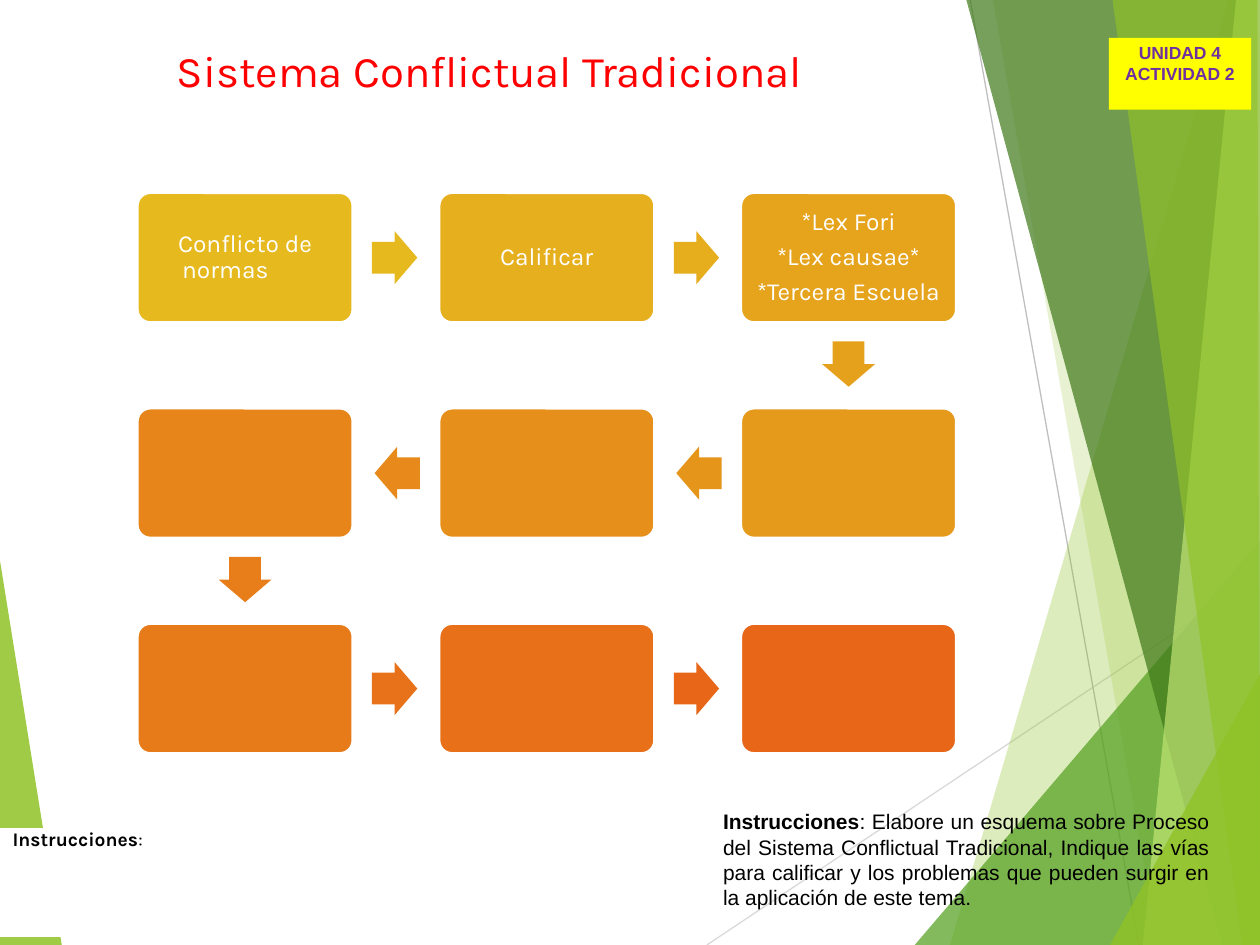
from lxml import etree
from pptx import Presentation
from pptx.dml.color import RGBColor
from pptx.enum.shapes import MSO_CONNECTOR, MSO_SHAPE
from pptx.enum.text import MSO_ANCHOR, MSO_AUTO_SIZE, PP_ALIGN
from pptx.oxml.ns import qn
from pptx.util import Inches, Pt

RECT, ROUND, ARROW = MSO_SHAPE.RECTANGLE, MSO_SHAPE.ROUNDED_RECTANGLE, MSO_SHAPE.RIGHT_ARROW
STRAIGHT = MSO_CONNECTOR.STRAIGHT
TOP, MIDDLE = MSO_ANCHOR.TOP, MSO_ANCHOR.MIDDLE
CENTER, JUSTIFY = PP_ALIGN.CENTER, PP_ALIGN.JUSTIFY
NO_AUTOFIT = MSO_AUTO_SIZE.NONE

COLORS = {
    "white": "FFFFFF", "black": "000000", "red": "FF0000", "yellow": "FFFF00",
    "purple": "7030A0", "lime": "90C226", "green": "54A021", "dark": "3F7819",
    "pale": "C0E474", "line": "D9D9D9", "line2": "BFBFBF",
    "flow_start": "E6B91E", "flow_end": "E76618",
}

# Background facets: colour, opacity in percent, corners
FACETS = [
    ("lime", 85, [(0, 4.45), (0.49, 7.5), (0, 7.5)]),
    ("lime", 30, [(9.75, 0), (7.54, 7.5), (10, 7.5), (10, 0)]),
    ("lime", 20, [(7.88, 0), (9.19, 7.5), (10, 7.5), (10, 0)]),
    ("green", 72, [(7.26, 7.5), (10, 4.29), (10, 7.5)]),
    ("dark", 70, [(7.67, 0), (9.7, 7.5), (10, 7.5), (10, 0)]),
    ("pale", 70, [(9.81, 0), (9.07, 7.5), (10, 7.5), (10, 0)]),
    ("lime", 65, [(8.83, 0), (9.86, 7.5), (10, 7.5), (9.98, 0)]),
    ("lime", 80, [(8.81, 7.5), (10, 5.35), (10, 7.5)]),
]
BACK_LINES = [("line", 5.61, 7.5, 10, 4.57), ("line2", 7.7, 0, 9.04, 7.5)]

# Flow of steps, three to a row, turning at the end of each row
STEPS = [["Conflicto de normas\t"], ["Calificar"],
         ["*Lex Fori", "*Lex causae*", "*Tercera Escuela"]] + [[]] * 6
COLUMNS = 3
FLOW_X, FLOW_Y = 1.09, 1.53
STEP_X, STEP_Y = 2.395, 1.71
BOX_W, BOX_H = 1.71, 1.03
ARROW_W, ARROW_H = 0.36, 0.42
ARROW_SHIFT = 0.01


def rgb(name):
    return RGBColor.from_string(COLORS[name])


def blend(t):
    start, end = rgb("flow_start"), rgb("flow_end")
    return RGBColor(*(round(a + (b - a) * t) for a, b in zip(start, end)))


def write(tf, paragraphs, size=12, font="Arial", color="black", align=CENTER,
          anchor=TOP, inset=(0.1, 0.05), spacing=None, after=None):
    """Fill a text frame; each paragraph is a list of (text, bold) runs."""
    tf.word_wrap = True
    tf.vertical_anchor = anchor
    tf.margin_left = tf.margin_right = Inches(inset[0])
    tf.margin_top = tf.margin_bottom = Inches(inset[1])
    for i, runs in enumerate(paragraphs):
        p = tf.paragraphs[0] if i == 0 else tf.add_paragraph()
        p.alignment = align
        if spacing:
            p.line_spacing = spacing
        if after:
            p.space_after = Pt(after)
        for text, bold in runs:
            r = p.add_run()
            r.text = text
            r.font.size, r.font.name, r.font.bold = Pt(size), font, bold
            r.font.color.rgb = rgb(color)


def add_box(s, kind, x, y, w, h, fill, border=None):
    sp = s.shapes.add_shape(kind, Inches(x), Inches(y), Inches(w), Inches(h))
    sp.shadow.inherit = False
    sp.fill.solid()
    sp.fill.fore_color.rgb = fill
    if border:
        sp.line.color.rgb = rgb(border)
        sp.line.width = Pt(1.5)
    else:
        sp.line.fill.background()
    return sp


def add_facet(s, color, opacity, corners):
    points = [(Inches(x), Inches(y)) for x, y in corners]
    builder = s.shapes.build_freeform(*points[0])
    builder.add_line_segments(points[1:], close=True)
    sp = builder.convert_to_shape()
    sp.shadow.inherit = False
    sp.fill.solid()
    sp.fill.fore_color.rgb = rgb(color)
    sp.line.fill.background()
    clr = sp._element.spPr.find(qn("a:solidFill"))[0]
    etree.SubElement(clr, qn("a:alpha")).set("val", str(opacity * 1000))


def add_line(s, color, *ends):
    line = s.shapes.add_connector(STRAIGHT, *map(Inches, ends))
    line.line.color.rgb = rgb(color)
    line.line.width = Pt(0.75)
    etree.SubElement(line._element.spPr, qn("a:effectLst"))


def add_background(s):
    add_facet(s, *FACETS[0])
    for line in BACK_LINES:
        add_line(s, *line)
    for facet in FACETS[1:]:
        add_facet(s, *facet)


def step_center(i):
    row, col = divmod(i, COLUMNS)
    if row % 2:
        col = COLUMNS - 1 - col
    return FLOW_X + col * STEP_X + BOX_W / 2, FLOW_Y + row * STEP_Y + BOX_H / 2


def add_step(s, i, lines):
    x, y = step_center(i)
    sp = add_box(s, ROUND, x - BOX_W / 2, y - BOX_H / 2, BOX_W, BOX_H,
                 blend(i / (len(STEPS) - 1)), border="white")
    sp.adjustments[0] = 0.1
    write(sp.text_frame, [[(line, False)] for line in lines], size=14, font="Karla",
          color="white", anchor=MIDDLE, inset=(0.06, 0.06), spacing=0.9, after=5)


def add_arrow(s, i):
    """Arrow from step i to the next one."""
    (x1, y1), (x2, y2) = step_center(i), step_center(i + 1)
    x, y = (x1 + x2) / 2, (y1 + y2) / 2
    if y2 > y1:
        angle, y = 90, y - ARROW_SHIFT
    elif x2 > x1:
        angle, x = 0, x - ARROW_SHIFT
    else:
        angle, x = 180, x + ARROW_SHIFT
    sp = add_box(s, ARROW, x - ARROW_W / 2, y - ARROW_H / 2, ARROW_W, ARROW_H,
                 blend(i / (len(STEPS) - 2)))
    sp.adjustments[0], sp.adjustments[1] = 0.6, 0.5
    sp.rotation = angle


def add_title(s, text):
    title = s.shapes.title
    title.left, title.top = Inches(0.47), Inches(0.3)
    title.width, title.height = Inches(6.83), Inches(0.95)
    title.text_frame.auto_size = NO_AUTOFIT
    write(title.text_frame, [[(text, False)]], size=25, font="Karla", color="red")


def add_instruction_table(s):
    frame = s.shapes.add_table(1, 1, Inches(0), Inches(6.58), Inches(3.53), Inches(0.85))
    cell = frame.table.cell(0, 0)
    cell.fill.solid()
    cell.fill.fore_color.rgb = rgb("white")
    write(cell.text_frame, [[("Instrucciones", True), (": ", False)]],
          size=11, font="Karla", align=JUSTIFY)
    cell.margin_left = cell.margin_right = Inches(0.1)
    cell.margin_top = cell.margin_bottom = 0


def add_instructions(s):
    tb = s.shapes.add_textbox(Inches(5.64), Inches(6.37), Inches(4.06), Inches(0.91))
    write(tb.text_frame, [[
        ("Instrucciones", True),
        (": Elabore un esquema sobre Proceso del Sistema Conflictual Tradicional, "
         "Indique las vías para calificar y los problemas que pueden surgir en "
         "la aplicación de este tema.", False)]], align=JUSTIFY)


def main():
    prs = Presentation()
    prs.slide_width, prs.slide_height = Inches(10), Inches(7.5)
    s = prs.slides.add_slide(prs.slide_layouts[5])

    add_background(s)
    add_title(s, "Sistema Conflictual Tradicional")

    # Unit label
    label = add_box(s, RECT, 8.8, 0.3, 1.13, 0.57, rgb("yellow"))
    write(label.text_frame, [[("UNIDAD 4", True)], [("ACTIVIDAD 2", True)]],
          size=10, color="purple", inset=(0.06, 0.03))

    # Flow
    for i, lines in enumerate(STEPS):
        add_step(s, i, lines)
        if i < len(STEPS) - 1:
            add_arrow(s, i)

    # Instructions
    add_instruction_table(s)
    add_instructions(s)
    prs.save("out.pptx")


if __name__ == "__main__":
    main()
